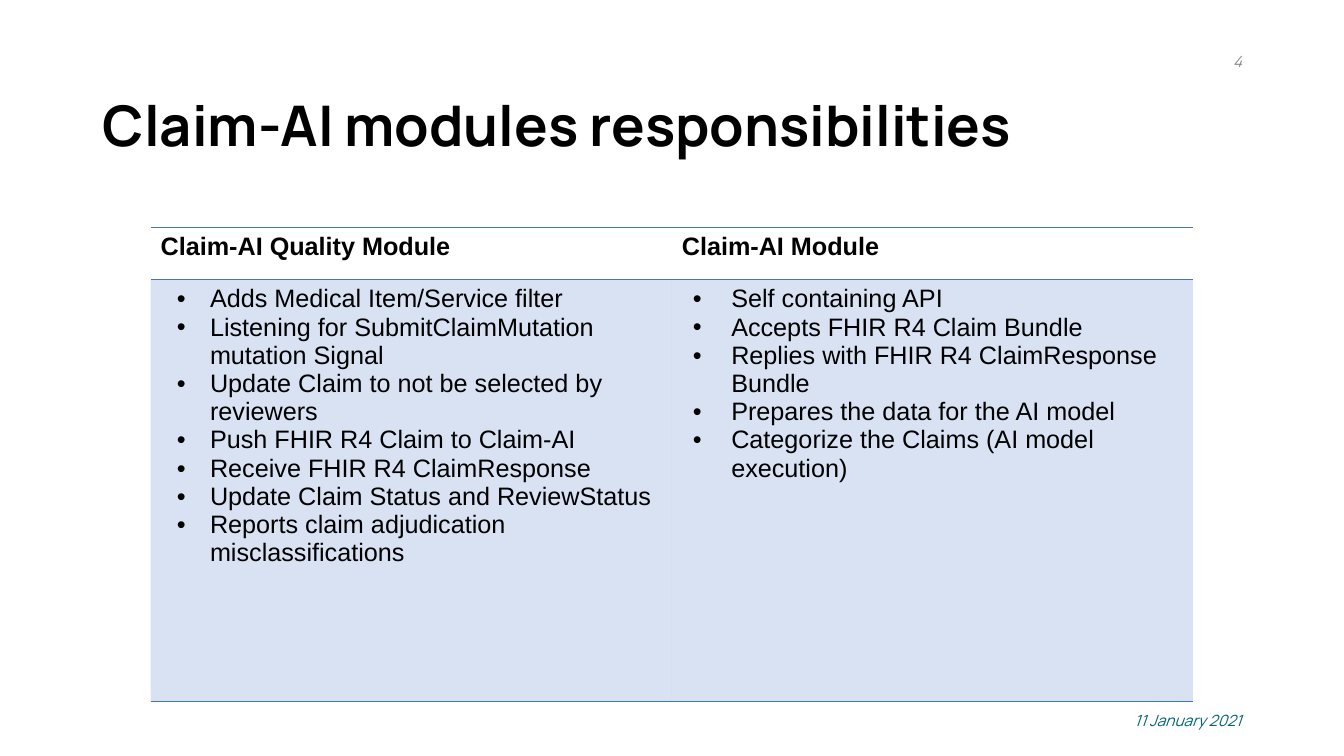
from lxml.etree import SubElement
from pptx import Presentation
from pptx.dml.color import RGBColor
from pptx.enum.text import MSO_ANCHOR, MSO_AUTO_SIZE, PP_ALIGN
from pptx.oxml.ns import qn
from pptx.util import Inches, Pt

BLACK = RGBColor(0x00, 0x00, 0x00)
TEAL = RGBColor(0x00, 0x63, 0x74)
GRAY = RGBColor(0x89, 0x89, 0x89)
BLUE = RGBColor(0x44, 0x72, 0xC4)

TITLE = {"name": "Manrope", "size": Pt(40), "bold": True, "italic": False}
SMALL = {"name": "Manrope", "size": Pt(11), "bold": False, "italic": True}
HEADING = {"name": "Arial", "size": Pt(18), "bold": True, "italic": False}
BODY = {**HEADING, "bold": False}

MODULES = [
    ("Claim-AI Quality Module", 0, -0.33, [
        "Adds Medical Item/Service filter",
        "Listening for SubmitClaimMutation mutation Signal",
        "Update Claim to not be selected by reviewers",
        "Push FHIR R4 Claim to Claim-AI",
        "Receive FHIR R4 ClaimResponse",
        "Update Claim Status and ReviewStatus",
        "Reports claim adjudication misclassifications",
    ]),
    ("Claim-AI Module", 1, -0.38, [
        "Self containing API",
        "Accepts FHIR R4 Claim Bundle",
        "Replies with FHIR R4 ClaimResponse Bundle",
        "Prepares the data for the AI model",
        "Categorize the Claims (AI model execution)",
    ]),
]


class SlideBuilder:
    """Holds the slide and its style, and places elements in hundredths of its size."""

    def __init__(self, presentation):
        self.width = presentation.slide_width
        self.height = presentation.slide_height
        self.slide = presentation.slides.add_slide(presentation.slide_layouts[5])

    def box(self, left, top, width, height):
        """Turn percentages of the slide into a left, top, width and height."""
        return [int(share * side / 100) for share, side in
                zip((left, top, width, height), (self.width, self.height) * 2)]

    def add_text(self, paragraph, text, style, color=BLACK):
        """Add one formatted run to a paragraph."""
        run = paragraph.add_run()
        run.text = text
        for name, value in style.items():
            setattr(run.font, name, value)
        run.font.color.rgb = color

    def frame(self, shape, text, style, color, alignment):
        """Fill a shape with one line of vertically centred text."""
        settings = {"word_wrap": True, "auto_size": MSO_AUTO_SIZE.NONE,
                    "vertical_anchor": MSO_ANCHOR.MIDDLE}
        for name, value in settings.items():
            setattr(shape.text_frame, name, value)
        paragraph = shape.text_frame.paragraphs[0]
        paragraph.alignment = alignment
        self.add_text(paragraph, text, style, color)
        return paragraph

    def title(self, text, *place):
        """Move and fill the title placeholder."""
        shape = self.slide.shapes.title
        shape.left, shape.top, shape.width, shape.height = self.box(*place)
        self.frame(shape, text, TITLE, BLACK, PP_ALIGN.LEFT).line_spacing = 0.9

    def label(self, text, color, *place):
        """Add a small right-aligned text."""
        shape = self.slide.shapes.add_textbox(*self.box(*place))
        self.frame(shape, text, SMALL, color, PP_ALIGN.RIGHT)

    def border(self, cell, side):
        """Draw a thin blue line on one side of a cell."""
        line = SubElement(cell._tc.get_or_add_tcPr(), qn(f"a:{side}"), w=str(Pt(1)))
        fill = SubElement(line, qn("a:solidFill"))
        SubElement(fill, qn("a:srgbClr"), val=str(BLUE))

    def bullet(self, paragraph, level, indent):
        """Give a paragraph a hanging round bullet."""
        paragraph.level = level
        properties = paragraph._p.get_or_add_pPr()
        properties.set("marL", str(Inches(0.49)))
        properties.set("indent", str(Inches(indent)))
        color = SubElement(properties, qn("a:buClr"))
        SubElement(color, qn("a:srgbClr"), val=str(BLACK))
        SubElement(properties, qn("a:buFont"), typeface="Arial")
        SubElement(properties, qn("a:buChar"), char="•")
        if level:
            tabs = SubElement(properties, qn("a:tabLst"))
            SubElement(tabs, qn("a:tab"), pos=str(Inches(0.2)), algn="l")

    def table(self, modules, heading_share, *place):
        """Add a table with a heading and a bullet list for each module."""
        left, top, width, height = self.box(*place)
        table = self.slide.shapes.add_table(
            2, len(modules), left, top, width, height).table
        table.first_row = table.horz_banding = False
        style = table._tbl.tblPr.find(qn("a:tableStyleId"))
        style.text = "{2D5ABB26-0587-4C30-8999-92F81FD0307C}"
        table.rows[0].height = int(height * heading_share)
        table.rows[1].height = height - table.rows[0].height
        for column, (heading, level, indent, items) in enumerate(modules):
            head, body = table.cell(0, column), table.cell(1, column)
            for cell in (head, body):
                for side in ("lnT", "lnB"):
                    self.border(cell, side)
            head.fill.background()
            self.add_text(head.text_frame.paragraphs[0], heading, HEADING)
            body.fill.solid()
            body.fill.fore_color.rgb = BLUE
            tint = body._tc.tcPr.find(qn("a:solidFill")).find(qn("a:srgbClr"))
            SubElement(tint, qn("a:alpha"), val="20000")
            for index, item in enumerate(items):
                frame = body.text_frame
                paragraph = frame.add_paragraph() if index else frame.paragraphs[0]
                self.bullet(paragraph, level, indent)
                self.add_text(paragraph, item, BODY)


def main():
    """Build the slide and save it."""
    presentation = Presentation()
    presentation.slide_width = Inches(13.33)
    presentation.slide_height = Inches(7.5)
    builder = SlideBuilder(presentation)
    builder.title("Claim-AI modules responsibilities", 6.9, 10.13, 86.25, 13.73)
    builder.label("11 January 2021", TEAL, 70.65, 92.67, 22.5, 5.33)
    builder.label("4", GRAY, 70.65, 5.47, 22.5, 5.33)
    builder.table(MODULES, 0.11, 11.2, 30.13, 77.57, 62.67)
    presentation.save("out.pptx")


if __name__ == "__main__":
    main()
